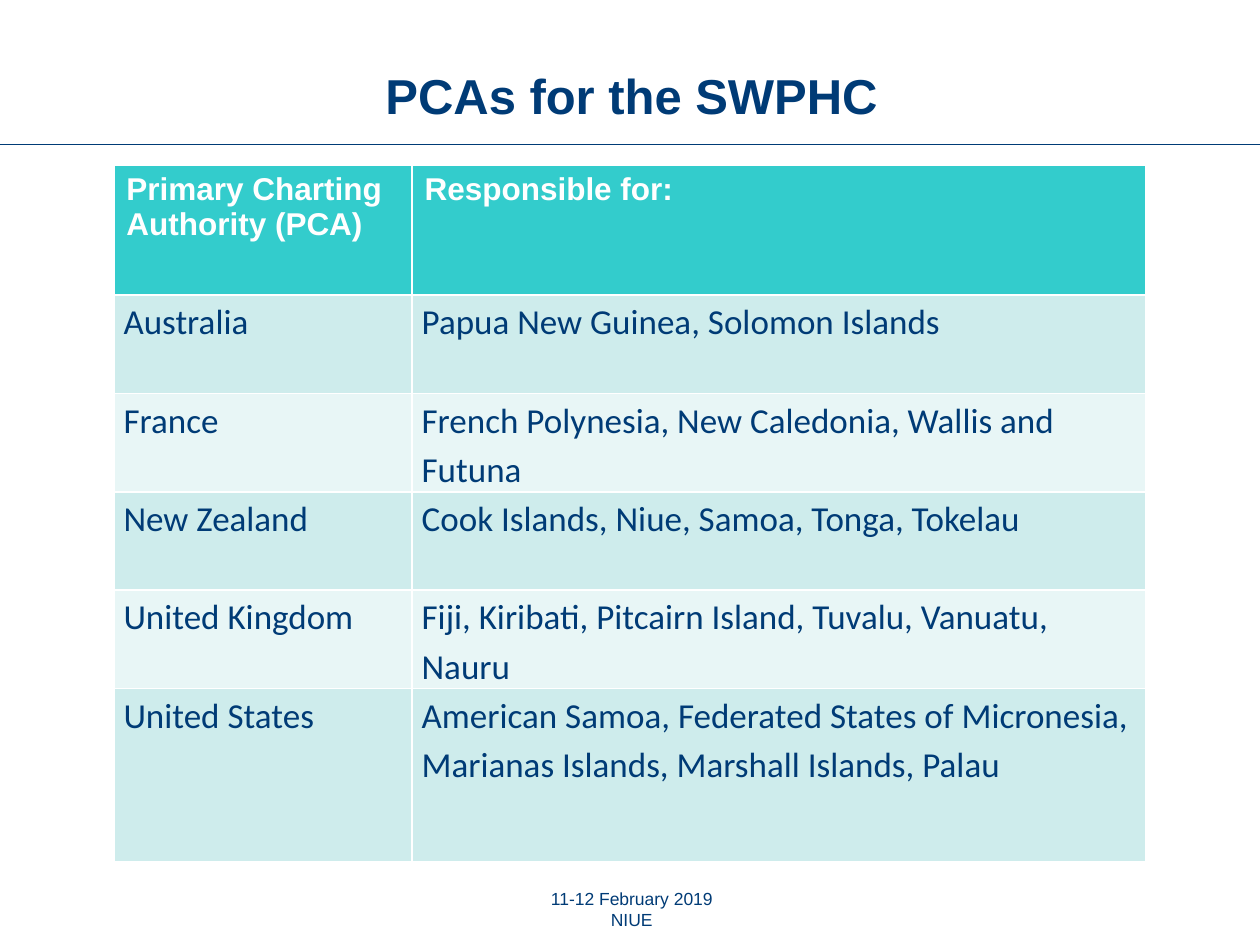
from lxml import etree
from pptx import Presentation
from pptx.dml.color import RGBColor
from pptx.enum.shapes import MSO_CONNECTOR
from pptx.enum.text import MSO_ANCHOR, PP_ALIGN
from pptx.oxml.ns import qn
from pptx.util import Cm, Pt

STRAIGHT = MSO_CONNECTOR.STRAIGHT
MIDDLE, TOP = MSO_ANCHOR.MIDDLE, MSO_ANCHOR.TOP
CENTER, LEFT = PP_ALIGN.CENTER, PP_ALIGN.LEFT
TITLE_ONLY = 5

NAVY, WHITE, TEAL = "003B76", "FFFFFF", "33CCCC"
BANDS = ("CEECEC", "E8F6F6")

HEADINGS = ("Primary Charting Authority (PCA)", "Responsible for:")
AUTHORITIES = (
    ("Australia", "Papua New Guinea, Solomon Islands"),
    ("France", "French Polynesia, New Caledonia, Wallis and Futuna"),
    ("New Zealand", "Cook Islands, Niue, Samoa, Tonga, Tokelau"),
    ("United Kingdom", "Fiji, Kiribati, Pitcairn Island, Tuvalu, Vanuatu, Nauru"),
    ("United States", "American Samoa, Federated States of Micronesia, "
                      "Marianas Islands, Marshall Islands, Palau"),
)


def color(value):
    return RGBColor.from_string(value)


class SlideBuilder:
    def __init__(self, slide):
        self.slide = slide

    def fill_text(self, frame, text, size, ink=NAVY, font="Arial", bold=False,
                  align=LEFT, spacing=1.0):
        frame.text = text
        frame.word_wrap = True
        for para in frame.paragraphs:
            para.alignment = align
            para.line_spacing = spacing
            for span in para.runs:
                span.font.name = font
                span.font.size = Pt(size)
                span.font.bold = bold
                span.font.color.rgb = color(ink)

    def title(self, text, left, top, width, height):
        box = self.slide.shapes.title
        box.left, box.top = Cm(left), Cm(top)
        box.width, box.height = Cm(width), Cm(height)
        box.text_frame.vertical_anchor = MIDDLE
        self.fill_text(box.text_frame, text, 28, bold=True, align=CENTER)

    def rule(self, top, width):
        line = self.slide.shapes.add_connector(
            STRAIGHT, 0, Cm(top), Cm(width), Cm(top))
        line.line.color.rgb = color(NAVY)
        line.line.width = Pt(0.75)
        etree.SubElement(line._element.spPr, qn("a:effectLst"))

    def text(self, text, left, top, width, height):
        box = self.slide.shapes.add_textbox(
            Cm(left), Cm(top), Cm(width), Cm(height))
        box.text_frame.vertical_anchor = TOP
        self.fill_text(box.text_frame, text, 10, align=CENTER)

    def cell(self, cell, text, fill, inset_x, inset_y, **style):
        cell.fill.solid()
        cell.fill.fore_color.rgb = color(fill)
        cell.margin_left = cell.margin_right = Cm(inset_x)
        cell.margin_top = cell.margin_bottom = Cm(inset_y)
        self.fill_text(cell.text_frame, text, **style)

    def table(self, headings, rows, left, top, widths, heights):
        # The default table style supplies the white grid lines
        table = self.slide.shapes.add_table(
            len(heights), len(widths), Cm(left), Cm(top),
            Cm(sum(widths)), Cm(sum(heights))).table
        for column, width in zip(table.columns, widths):
            column.width = Cm(width)
        for row, height in zip(table.rows, heights):
            row.height = Cm(height)
        for index, heading in enumerate(headings):
            self.cell(table.cell(0, index), heading, TEAL, 0.25, 0.13,
                      size=18, ink=WHITE, bold=True)
        for number, row in enumerate(rows):
            for index, entry in enumerate(row):
                self.cell(table.cell(number + 1, index), entry,
                          BANDS[number % 2], 0.19, 0,
                          size=20, font="Calibri", spacing=1.15)


def main():
    deck = Presentation()
    deck.slide_width, deck.slide_height = Cm(25.4), Cm(19.05)
    page = SlideBuilder(deck.slides.add_slide(deck.slide_layouts[TITLE_ONLY]))

    # Heading and the rule below it
    page.rule(2.92, 25.4)
    page.title("PCAs for the SWPHC", 1.3, 1.12, 22.86, 1.6)

    # Charting authorities and their areas
    page.table(HEADINGS, AUTHORITIES, 2.3, 3.33, (6.01, 14.78),
               (2.62, *[1.98] * 4, 3.48))

    # Meeting date and place
    page.text("11-12 February 2019\nNIUE", 8.71, 17.78, 8.05, 1.27)

    deck.save("out.pptx")


if __name__ == "__main__":
    main()
